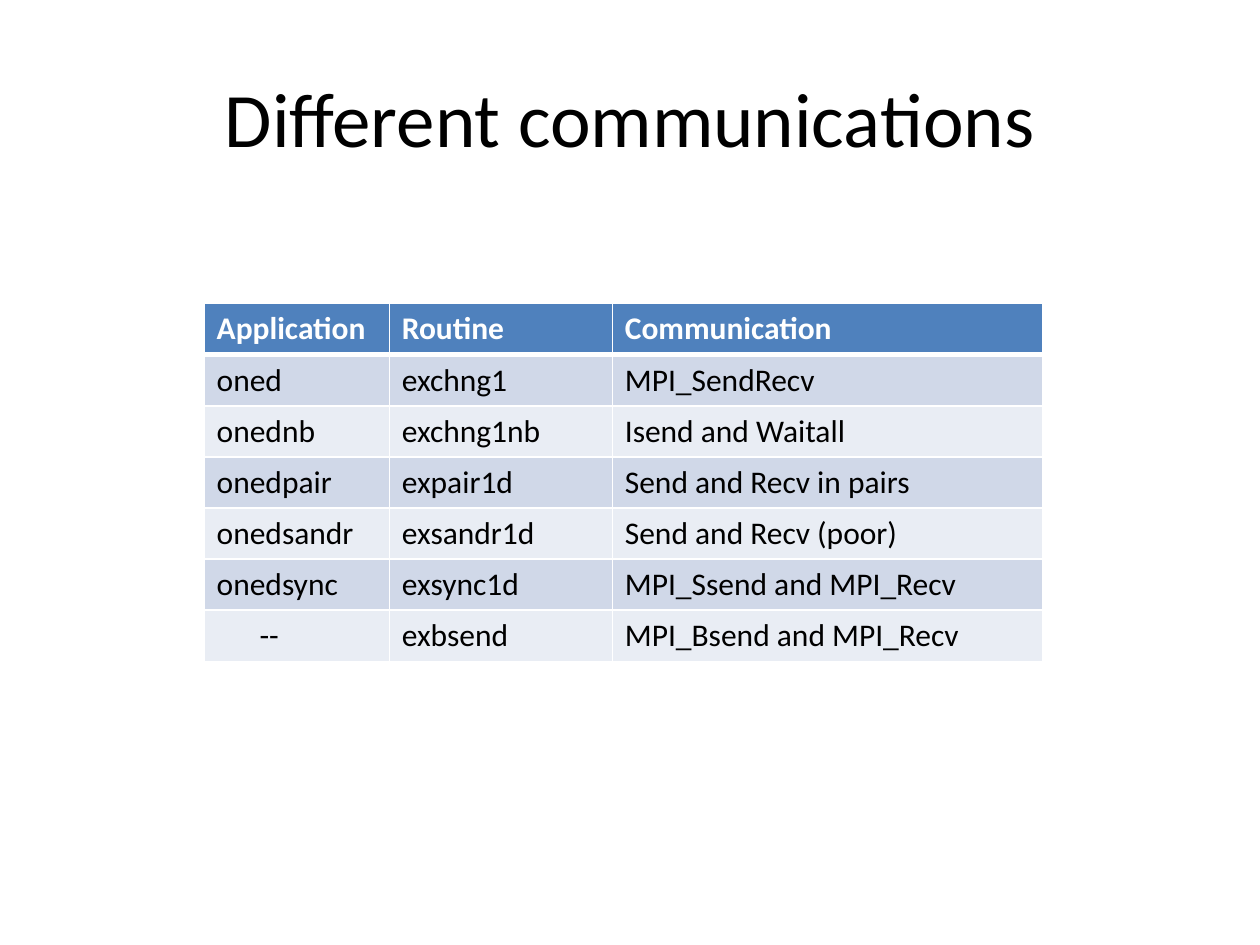
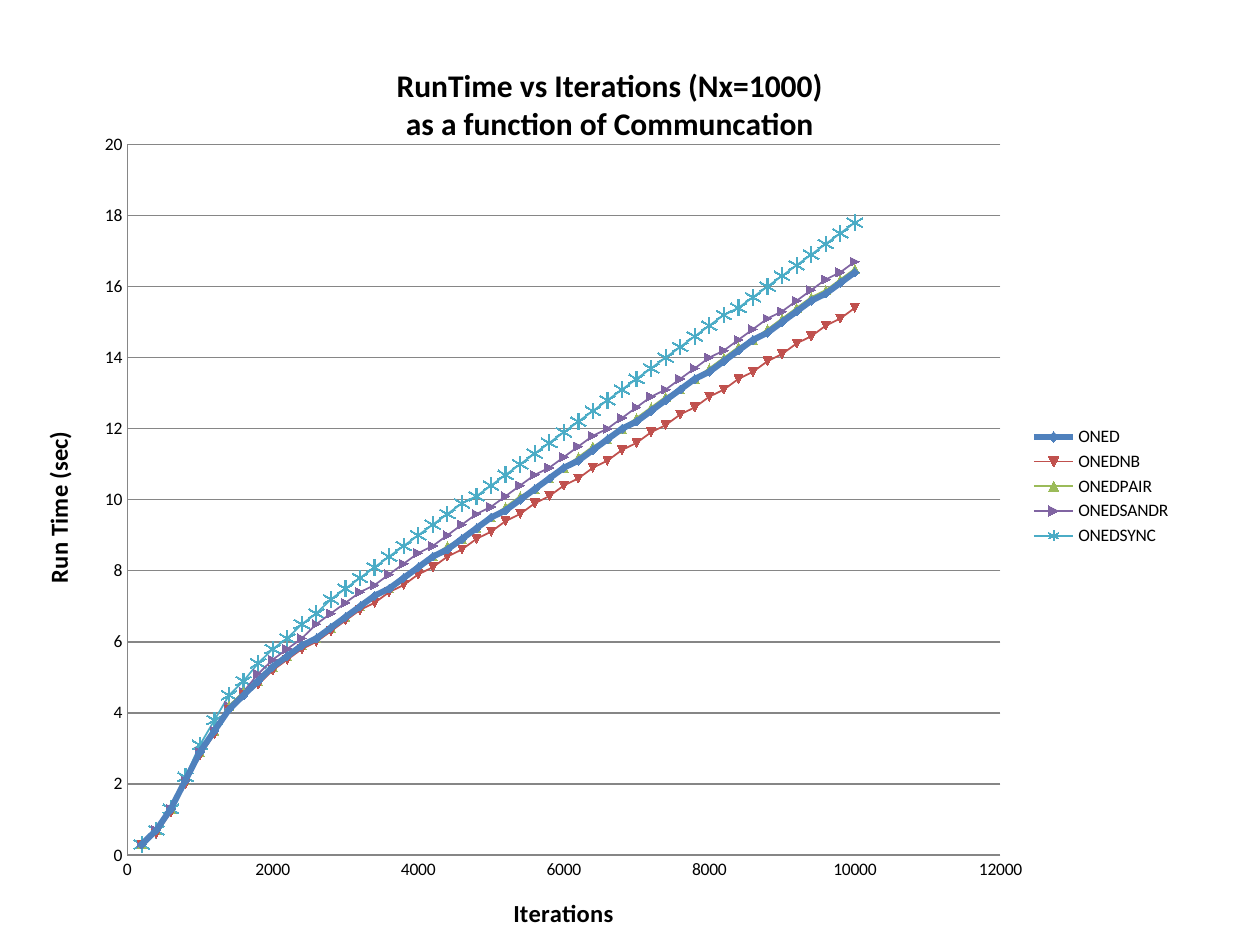
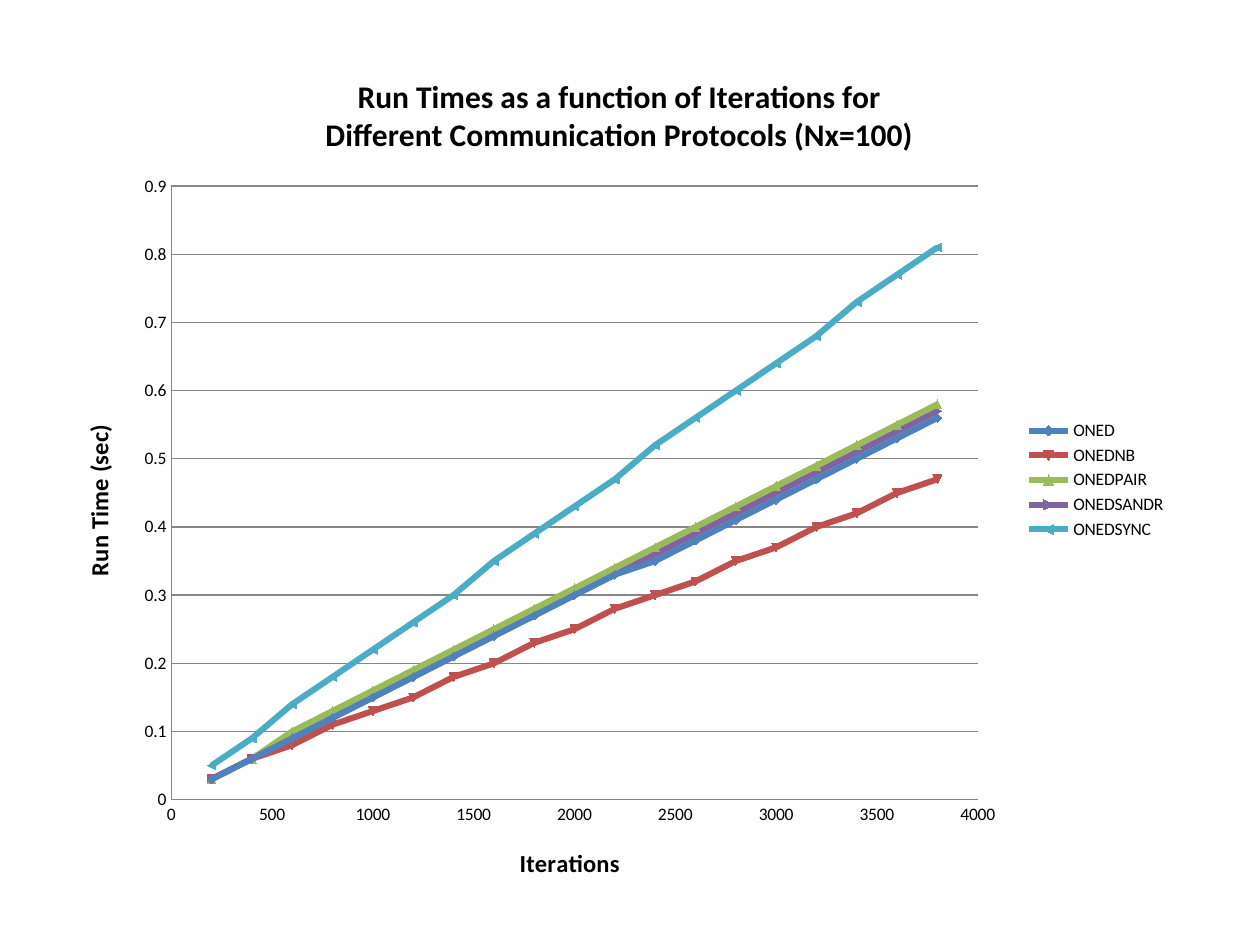
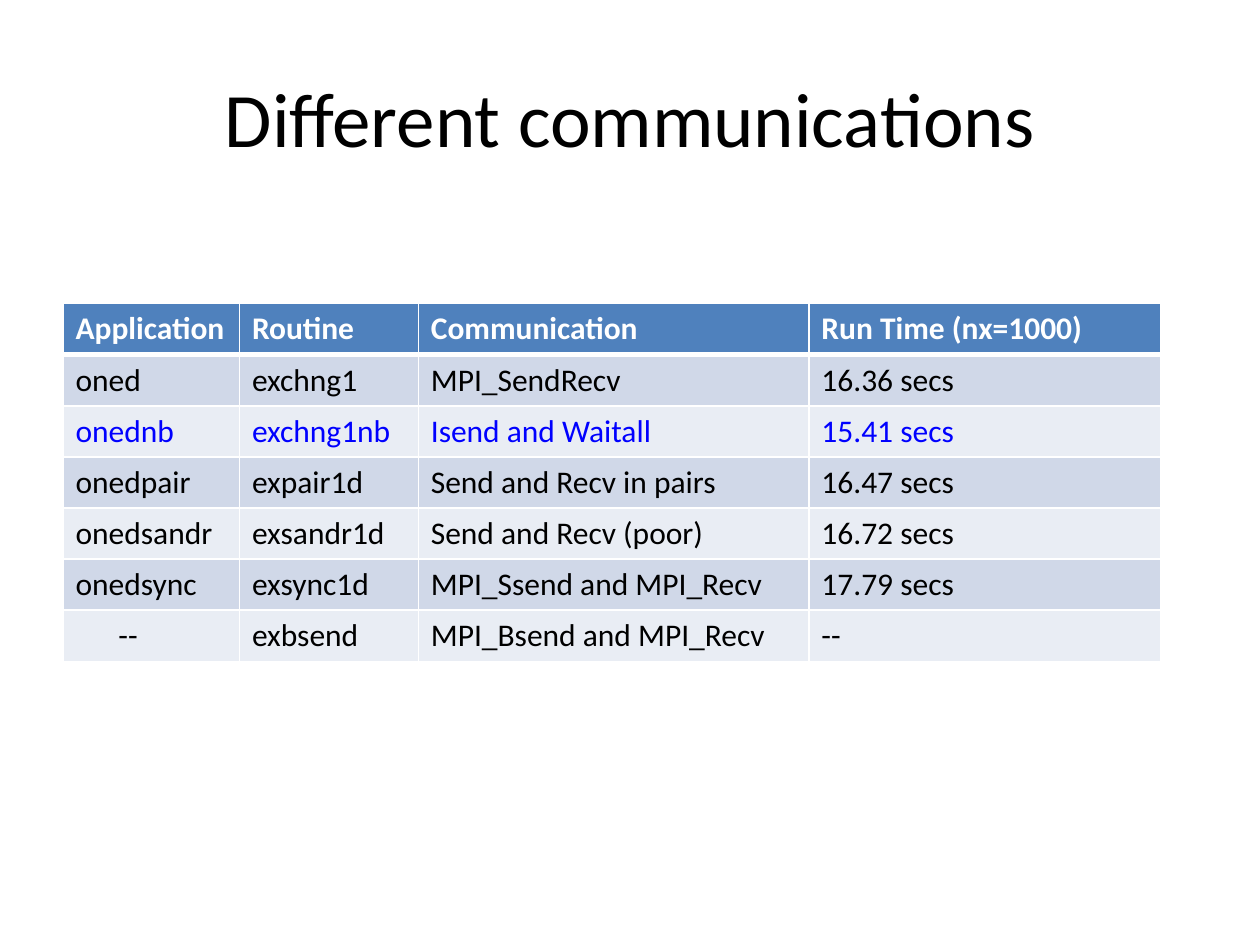
from itertools import pairwise

from lxml import etree
from pptx import Presentation
from pptx.chart.data import XyChartData
from pptx.dml.color import RGBColor
from pptx.enum import chart as kinds, text
from pptx.oxml import ns
from pptx.util import Inches, Pt

FONT = "Calibri"
COLORS = {
    "paper": "FFFFFF", "ink": "000000", "header": "4F81BD", "odd": "D0D8E8",
    "even": "E9EDF4", "highlight": "0000FF", "grid": "868686",
    "ONED": "4F81BD", "ONEDNB": "C0504D", "ONEDPAIR": "9BBB59",
    "ONEDSANDR": "8064A2", "ONEDSYNC": "4BACC6",
}

TITLE = "Different communications"
NONE = "--"
ROUTINES = [
    ("Application", "Routine", "Communication"),
    ("oned", "exchng1", "MPI_SendRecv"),
    ("onednb", "exchng1nb", "Isend and Waitall"),
    ("onedpair", "expair1d", "Send and Recv in pairs"),
    ("onedsandr", "exsandr1d", "Send and Recv (poor)"),
    ("onedsync", "exsync1d", "MPI_Ssend and MPI_Recv"),
    (NONE, "exbsend", "MPI_Bsend and MPI_Recv"),
]
RUN_TIMES = ["Run Time (nx=1000)", "16.36 secs", "15.41 secs", "16.47 secs",
             "16.72 secs", "17.79 secs", NONE]
FASTEST = 2  # table row

ROUTINE_TABLE = {"left": 1.62, "columns": [1.47, 1.77, 3.42], "rows": ROUTINES}
TIMED_TABLE = {
    "left": 0.5, "columns": [1.4, 1.42, 3.1, 2.79], "highlight": FASTEST,
    "rows": [row + (time,) for row, time in zip(ROUTINES, RUN_TIMES)],
}
TABLE_TOP, TABLE_HEIGHT = 2.41, 2.84

# Run times grow linearly between the knots, with a point at every step.
STEP = 200
LARGE_GRID = {
    "title": "RunTime vs Iterations (Nx=1000)\nas a function of Communcation",
    "place": (0.28, 0.29, 9.12, 7.14),
    "plot": (0.08, 0.12, 0.76, 0.79),
    "x_axis": (12000, 2000), "y_axis": (20, 2),
    "widths": {"ONED": 3.5}, "width": 1, "digits": 1,
    "markers": {"ONEDSYNC": (kinds.XL_MARKER_STYLE.STAR, 9)},
    "knots": (200, 400, 600, 1000, 1400, 2000, 3000, 10000),
    "series": {
        "ONED": (0.3, 0.7, 1.3, 2.9, 4.1, 5.3, 6.7, 16.4),
        "ONEDNB": (0.3, 0.6, 1.2, 2.8, 4.1, 5.2, 6.6, 15.4),
        "ONEDPAIR": (0.3, 0.7, 1.3, 2.9, 4.2, 5.3, 6.7, 16.5),
        "ONEDSANDR": (0.3, 0.7, 1.3, 2.9, 4.2, 5.5, 7.1, 16.7),
        "ONEDSYNC": (0.3, 0.7, 1.3, 3.1, 4.5, 5.8, 7.5, 17.8),
    },
}
SMALL_GRID = {
    "title": "Run Times as a function of Iterations for\n"
             "Different Communication Protocols (Nx=100)",
    "place": (0.47, 0.38, 8.89, 6.86),
    "plot": (0.1, 0.16, 0.72, 0.71),
    "x_axis": (4000, 500), "y_axis": (0.9, 0.1),
    "widths": {}, "width": 3.5, "digits": 2, "markers": {},
    "knots": (200, 1000, 3800),
    "series": {
        "ONED": (0.03, 0.15, 0.56),
        "ONEDNB": (0.03, 0.13, 0.47),
        "ONEDPAIR": (0.03, 0.16, 0.58),
        "ONEDSANDR": (0.03, 0.15, 0.57),
        "ONEDSYNC": (0.05, 0.22, 0.81),
    },
}


def rgb(name):
    return RGBColor.from_string(COLORS[name])


def set_font(font, size, color="ink", bold=False):
    for key, value in {"name": FONT, "size": Pt(size), "bold": bold}.items():
        setattr(font, key, value)
    font.color.rgb = rgb(color)


def add_title(page):
    box = page.shapes.add_textbox(Inches(0.5), Inches(0.3), Inches(9), Inches(1.25))
    frame = box.text_frame
    frame.word_wrap = True
    frame.vertical_anchor = text.MSO_ANCHOR.MIDDLE
    para = frame.paragraphs[0]
    para.alignment = text.PP_ALIGN.CENTER
    span = para.add_run()
    span.text = TITLE
    set_font(span.font, 44)


def add_borders(cell, top, bottom):
    """Draw white lines, 1 point at the sides and as given above and below."""
    props = cell._tc.get_or_add_tcPr()
    for side, width in {"lnL": 1, "lnR": 1, "lnT": top, "lnB": bottom}.items():
        line = etree.SubElement(props, ns.qn(f"a:{side}"), w=str(Pt(width)))
        fill = etree.SubElement(line, ns.qn("a:solidFill"))
        etree.SubElement(fill, ns.qn("a:srgbClr"), val=COLORS["paper"])


def fill_cell(cell, words, row, column, color):
    add_borders(cell, top=3 if row == 1 else 1, bottom=3 if row == 0 else 1)
    cell.fill.solid()
    cell.fill.fore_color.rgb = rgb("header" if row == 0 else "odd" if row % 2 else "even")
    para = cell.text_frame.paragraphs[0]
    span = para.add_run()
    span.text = words
    set_font(span.font, 18, color, bold=row == 0)
    if words == NONE and column == 0:
        para._p.get_or_add_pPr().set("marL", str(Inches(0.34)))


def add_table(page, left, columns, rows, highlight=None):
    frame = page.shapes.add_table(len(rows), len(columns), Inches(left), Inches(TABLE_TOP),
                                  Inches(sum(columns)), Inches(TABLE_HEIGHT))
    table = frame.table
    for column, width in zip(table.columns, columns):
        column.width = Inches(width)
    for r, row in enumerate(rows):
        table.rows[r].height = Inches(TABLE_HEIGHT / len(rows))
        color = "paper" if r == 0 else "highlight" if r == highlight else "ink"
        for c, words in enumerate(row):
            fill_cell(table.cell(r, c), words, r, c, color)


def write_heading(title, words, size):
    """Write a bold chart or axis title."""
    title.text_frame.text = words
    for para in title.text_frame.paragraphs:
        set_font(para.font, size, bold=True)
        for span in para.runs:
            set_font(span.font, size, bold=True)


def format_axis(axis, words, scale, grid):
    write_heading(axis.axis_title, words, 14)
    maximum, unit = scale
    values = {
        "minimum_scale": 0, "maximum_scale": maximum, "major_unit": unit,
        "major_tick_mark": kinds.XL_TICK_MARK.NONE,
        "minor_tick_mark": kinds.XL_TICK_MARK.NONE,
        "has_major_gridlines": grid,
    }
    for key, value in values.items():
        setattr(axis, key, value)
    set_font(axis.tick_labels.font, 10)
    for line in [axis.format.line] + ([axis.major_gridlines.format.line] if grid else []):
        line.color.rgb = rgb("grid")
        line.width = Pt(0.75)


def place_plot(chart, fractions):
    """Fix the inner plot area as fractions of the chart's size."""
    area = chart._chartSpace.chart.plotArea
    for old in area.findall(ns.qn("c:layout")):
        area.remove(old)
    layout = etree.Element(ns.qn("c:layout"))
    area.insert(0, layout)
    manual = etree.SubElement(layout, ns.qn("c:manualLayout"))
    settings = [("layoutTarget", "inner"), ("xMode", "edge"), ("yMode", "edge")]
    for tag, value in settings + list(zip("xywh", fractions)):
        etree.SubElement(manual, ns.qn(f"c:{tag}"), val=str(value))


def format_series(series, width, marker):
    color = rgb(series.name)
    series.smooth = False
    series.format.line.color.rgb = color
    series.format.line.width = Pt(width)
    series.marker.style, series.marker.size = marker
    series.marker.format.fill.solid()
    series.marker.format.fill.fore_color.rgb = color
    series.marker.format.line.color.rgb = color


def points_between(knots, times, digits):
    """Return a point for every step, and the last one twice as it was logged."""
    points = [(knots[0], times[0])]
    for (start, low), (end, high) in pairwise(zip(knots, times)):
        for x in range(start + STEP, end + STEP, STEP):
            share = (x - start) / (end - start)
            points.append((x, round(low + share * (high - low), digits)))
    return points + points[-1:]


def add_run_times(page, content):
    data = XyChartData()
    for name, times in content["series"].items():
        series = data.add_series(name)
        for point in points_between(content["knots"], times, content["digits"]):
            series.add_data_point(*point)
    frame = page.shapes.add_chart(kinds.XL_CHART_TYPE.XY_SCATTER_LINES,
                                  *map(Inches, content["place"]), data)
    chart = frame.chart
    set_font(chart.font, 10)
    write_heading(chart.chart_title, content["title"], 18)
    chart.has_legend = True
    chart.legend.position = kinds.XL_LEGEND_POSITION.RIGHT
    chart.legend.include_in_layout = False
    set_font(chart.legend.font, 10)
    format_axis(chart.category_axis, "Iterations", content["x_axis"], grid=False)
    format_axis(chart.value_axis, "Run Time (sec)", content["y_axis"], grid=True)
    place_plot(chart, content["plot"])
    plot = chart.plots[0]
    plot.vary_by_categories = False
    automatic = (kinds.XL_MARKER_STYLE.AUTOMATIC, 5)
    for series in plot.series:
        format_series(series, content["widths"].get(series.name, content["width"]),
                      content["markers"].get(series.name, automatic))


def main():
    deck = Presentation()
    deck.slide_width, deck.slide_height = Inches(10), Inches(7.5)
    pages = [deck.slides.add_slide(deck.slide_layouts[6]) for _ in range(4)]
    for page, table in ((pages[0], ROUTINE_TABLE), (pages[3], TIMED_TABLE)):
        add_title(page)
        add_table(page, **table)
    for page, content in ((pages[1], LARGE_GRID), (pages[2], SMALL_GRID)):
        add_run_times(page, content)
    deck.save("out.pptx")


if __name__ == "__main__":
    main()
